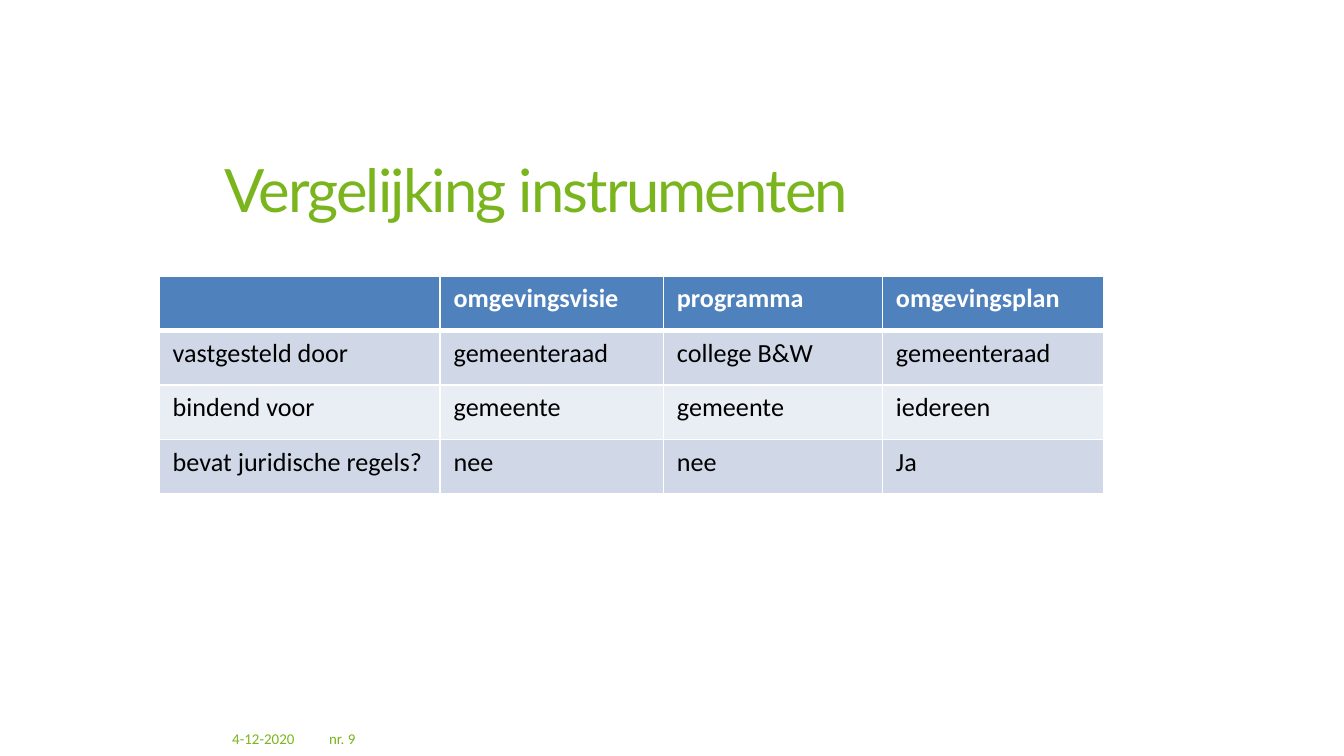
import pptx
import pptx.dml.color
import pptx.oxml
import pptx.oxml.ns
import pptx.util
from pptx.util import Cm

COLORS = {
    "green": "7AB51D",
    "blue": "4F81BD",
    "band_dark": "D0D8E8",
    "band_light": "E9EDF4",
    "white": "FFFFFF",
    "black": "000000",
}

ROWS = [
    ["", "omgevingsvisie", "programma", "omgevingsplan"],
    ["vastgesteld door", "gemeenteraad", "college B&W", "gemeenteraad"],
    ["bindend voor", "gemeente", "gemeente", "iedereen"],
    ["bevat juridische regels?", "nee", "nee", "Ja"],
]
COL_WIDTHS = [5.31, 4.22, 4.14, 4.19]
ROW_HEIGHT = 1.03


class Deck:
    font = "Calibri"
    title_font = "Lato"

    def __init__(self, width, height):
        self.prs = pptx.Presentation()
        self.prs.slide_width, self.prs.slide_height = Cm(width), Cm(height)
        self.s = self.prs.slides.add_slide(self.prs.slide_layouts[6])

    def rgb(self, name):
        return pptx.dml.color.RGBColor.from_string(COLORS[name])

    def run(self, p, text, size, color, font=None, bold=False, spacing=0):
        r = p.add_run()
        r.text = text
        r.font.name = font or self.font
        r.font.size = pptx.util.Pt(size)
        r.font.bold = bold
        r.font.color.rgb = self.rgb(color)
        if spacing:
            r._r.get_or_add_rPr().set("spc", str(spacing * 100))

    def text(self, text, x, y, w, h, size, **style):
        sp = self.s.shapes.add_textbox(Cm(x), Cm(y), Cm(w), Cm(h))
        tf = sp.text_frame
        tf.word_wrap = True
        self.run(tf.paragraphs[0], text, size, "green", **style)

    def borders(self, cell, bottom):
        tcPr = cell._tc.get_or_add_tcPr()
        for side, width in (("L", 1), ("R", 1), ("T", 1), ("B", bottom)):
            tcPr.append(pptx.oxml.parse_xml(
                f'<a:ln{side} {pptx.oxml.ns.nsdecls("a")} w="{pptx.util.Pt(width)}">'
                f'<a:solidFill><a:srgbClr val="{COLORS["white"]}"/></a:solidFill>'
                f'</a:ln{side}>'))

    def table(self, rows, x, y, widths, row_height):
        table = self.s.shapes.add_table(
            len(rows), len(widths), Cm(x), Cm(y),
            Cm(sum(widths)), Cm(row_height * len(rows))).table
        for col, width in zip(table.columns, widths):
            col.width = Cm(width)
        for i, row in enumerate(rows):
            table.rows[i].height = Cm(row_height)
            header = i == 0
            fill = "blue" if header else ("band_light", "band_dark")[i % 2]
            for j, text in enumerate(row):
                cell = table.cell(i, j)
                self.borders(cell, 3 if header else 1)
                cell.fill.solid()
                cell.fill.fore_color.rgb = self.rgb(fill)
                self.run(cell.text_frame.paragraphs[0], text, 14,
                         "white" if header else "black", bold=header)

    def save(self):
        self.prs.save("out.pptx")


def main():
    deck = Deck(25.4, 14.29)
    deck.text("nr. 9", 5.97, 13.67, 3.02, 0.6, 8)
    deck.text("4-12-2020", 4.14, 13.67, 1.8, 0.6, 8)
    deck.text("Vergelijking instrumenten", 3.99, 2.77, 17, 2.39, 32,
              font=deck.title_font, spacing=-1)
    deck.table(ROWS, 3.01, 5.22, COL_WIDTHS, ROW_HEIGHT)
    deck.save()


if __name__ == "__main__":
    main()
